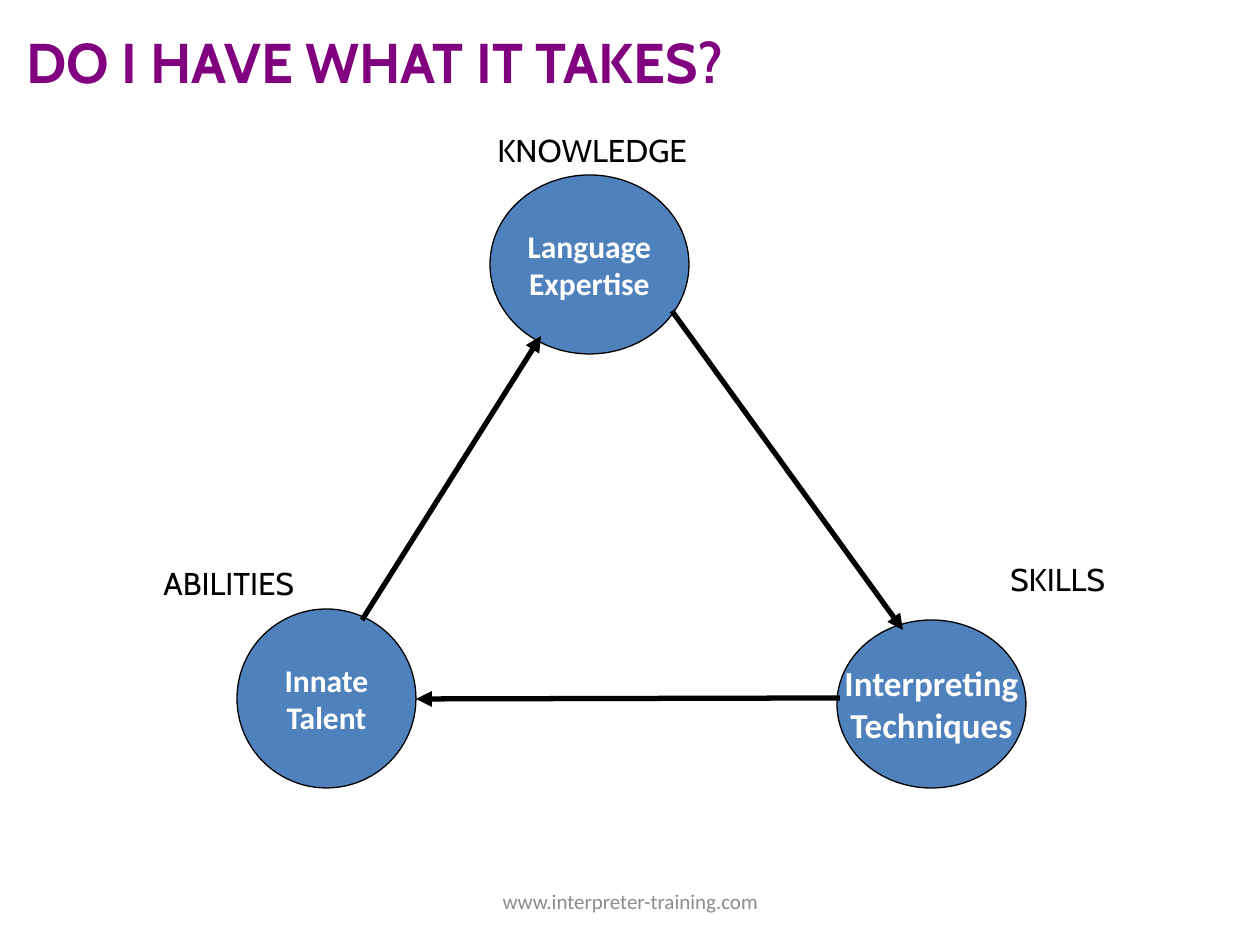
from typing import NamedTuple

from lxml import etree
from pptx import Presentation
from pptx.dml.color import RGBColor
from pptx.enum.shapes import MSO_CONNECTOR, MSO_SHAPE
from pptx.enum.text import MSO_ANCHOR, PP_ALIGN
from pptx.oxml.ns import qn
from pptx.util import Emu, Pt

LINE, OVAL = MSO_CONNECTOR.STRAIGHT, MSO_SHAPE.OVAL
LEFT, MID = PP_ALIGN.LEFT, PP_ALIGN.CENTER
TOP, CENTER = MSO_ANCHOR.TOP, MSO_ANCHOR.MIDDLE
SCALE = 914400 / 126  # EMU per px
BLUE, BLACK, WHITE, PURPLE, GREY = "4F81BD", "000000", "FFFFFF", "800080", "8C8C8C"


class Box(NamedTuple):
    x: int
    y: int
    w: int
    h: int


class Style(NamedTuple):
    size: int
    font: str = "Cabin"
    color: str = BLACK
    bold: bool = False
    align: PP_ALIGN = LEFT
    anchor: MSO_ANCHOR = TOP


class Label(NamedTuple):
    box: Box
    text: str
    style: Style
    wrap: bool = True


class Node(NamedTuple):
    box: Box
    lines: tuple[str, ...]
    size: int


class Arrow(NamedTuple):
    x1: int
    y1: int
    x2: int
    y2: int


HEAD = Style(18)
LABELS = [
    Label(Box(14, 21, 1187, 81), "DO I HAVE WHAT IT TAKES?", Style(32, color=PURPLE, bold=True)),
    Label(Box(485, 125, 292, 50), "KNOWLEDGE", HEAD),
    Label(Box(151, 558, 168, 50), "ABILITIES", HEAD, wrap=False),
    Label(Box(998, 554, 131, 50), "SKILLS", HEAD),
    Label(Box(431, 876, 399, 50), "www.interpreter-training.com",
          Style(12, "Calibri", GREY, align=MID, anchor=CENTER)),
]
NODES = [
    Node(Box(490, 175, 199, 179), ("Language", "Expertise"), 18),
    Node(Box(237, 609, 179, 179), ("Innate", "Talent"), 18),
    Node(Box(837, 620, 189, 168), ("Interpreting", "Techniques"), 20),
]
ARROWS = [
    Arrow(362, 620, 541, 336),
    Arrow(672, 311, 903, 630),
    Arrow(840, 698, 416, 699),
]


def px(*vals: int) -> list[Emu]:
    return [Emu(round(val * SCALE)) for val in vals]


def rgb(code: str) -> RGBColor:
    return RGBColor.from_string(code)


def write(frame, lines: tuple[str, ...], style: Style, wrap: bool) -> None:
    frame.word_wrap = wrap
    frame.vertical_anchor = style.anchor
    for i, line in enumerate(lines):
        para = frame.add_paragraph() if i else frame.paragraphs[0]
        para.alignment = style.align
        run = para.add_run()
        run.text = line
        font = run.font
        font.name, font.size, font.bold = style.font, Pt(style.size), style.bold
        font.color.rgb = rgb(style.color)


def add_label(slide, label: Label) -> None:
    box = slide.shapes.add_textbox(*px(*label.box))
    write(box.text_frame, (label.text,), label.style, label.wrap)


def add_node(slide, node: Node) -> None:
    oval = slide.shapes.add_shape(OVAL, *px(*node.box))
    oval.shadow.inherit = False
    oval.fill.solid()
    oval.fill.fore_color.rgb = rgb(BLUE)
    oval.line.color.rgb = rgb(BLACK)
    oval.line.width = Pt(0.75)
    style = Style(node.size, "Calibri", WHITE, True, MID, CENTER)
    write(oval.text_frame, node.lines, style, wrap=False)


def add_arrow(slide, arrow: Arrow) -> None:
    link = slide.shapes.add_connector(LINE, *px(*arrow))
    link.line.color.rgb = rgb(BLACK)
    link.line.width = Pt(3)
    etree.SubElement(link.line._get_or_add_ln(), qn("a:tailEnd"), type="triangle")
    etree.SubElement(link._element.spPr, qn("a:effectLst"))


def main() -> None:
    deck = Presentation()
    deck.slide_width, deck.slide_height = px(1260, 945)
    slide = deck.slides.add_slide(deck.slide_layouts[6])
    for node in NODES:
        add_node(slide, node)
    for arrow in ARROWS:
        add_arrow(slide, arrow)
    for label in LABELS:
        add_label(slide, label)
    deck.save("out.pptx")


if __name__ == "__main__":
    main()
